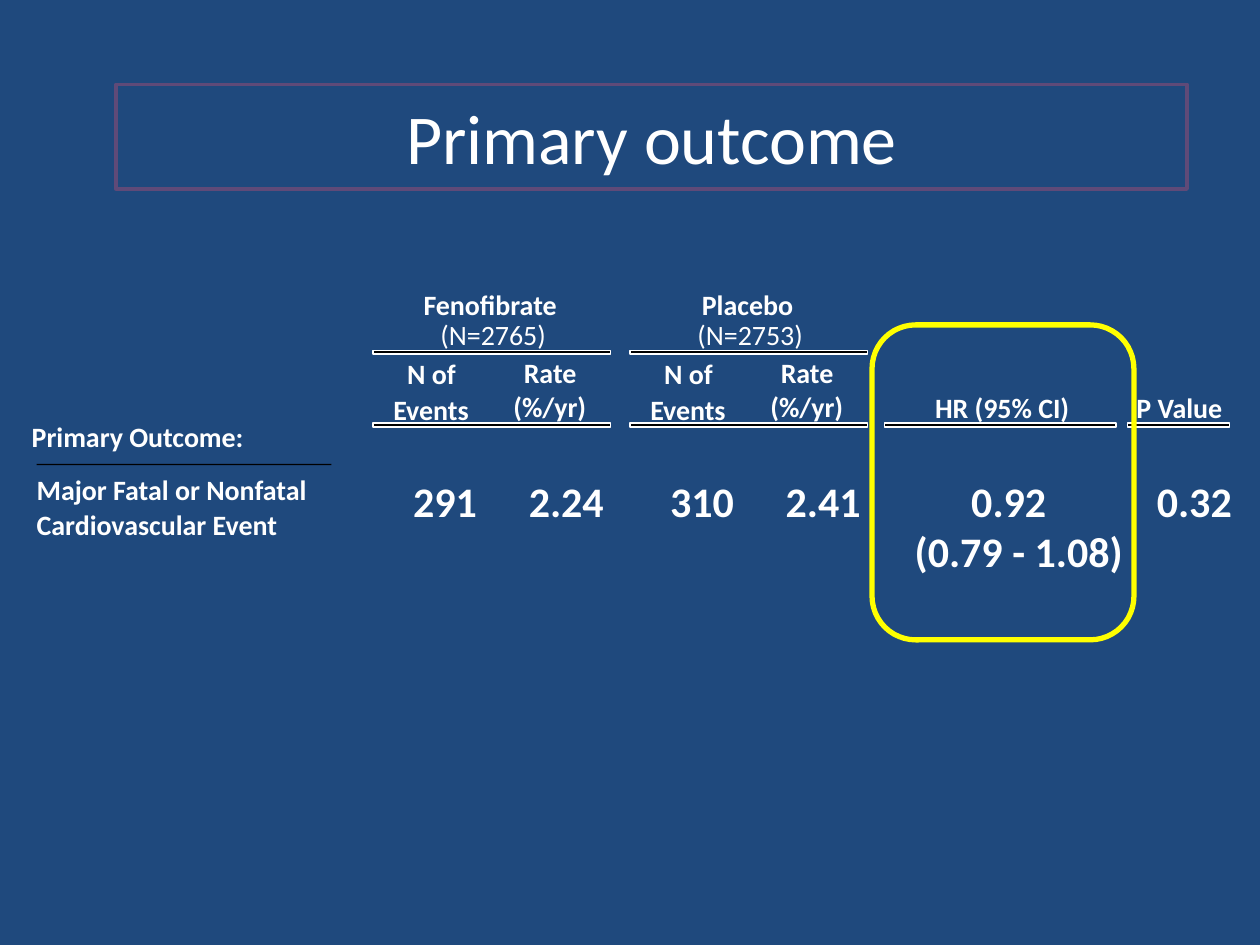
import dataclasses

import pptx
import pptx.dml.color
import pptx.enum.shapes
import pptx.enum.text
import pptx.util

Cm = pptx.util.Cm
Pt = pptx.util.Pt
NAVY = pptx.dml.color.RGBColor(0x1F, 0x49, 0x7D)
PURPLE = pptx.dml.color.RGBColor(0x5F, 0x4A, 0x78)
WHITE = pptx.dml.color.RGBColor(0xFF, 0xFF, 0xFF)
BLACK = pptx.dml.color.RGBColor(0x00, 0x00, 0x00)
YELLOW = pptx.dml.color.RGBColor(0xFF, 0xFF, 0x00)
FONT = "Calibri"
RULE_HEIGHT = 0.08
GROUP_RULE_TOP = 1.27
HEADER_TOP = 2.08
HEADER_RULE_TOP = 2.74
VALUE_TOP = 3.79
VALUE_SIZE = 24


@dataclasses.dataclass
class Box:
    left: float
    top: float
    width: float
    height: float

    def inner(self, left, top, width, height):
        return Box(self.left + left, self.top + top, width, height)

    def lengths(self):
        return Cm(self.left), Cm(self.top), Cm(self.width), Cm(self.height)


def format_span(span, size, bold):
    span.font.name = FONT
    span.font.size = Pt(size)
    span.font.bold = bold
    span.font.color.rgb = WHITE


def add_text(shapes, box, text, size=16, bold=True, first_indent=0):
    label = shapes.add_textbox(*box.lengths())
    frame = label.text_frame
    frame.margin_left = frame.margin_right = 0
    frame.margin_top = frame.margin_bottom = 0
    frame.word_wrap = False
    frame.auto_size = pptx.enum.text.MSO_AUTO_SIZE.SHAPE_TO_FIT_TEXT
    frame.text = text
    for para in frame.paragraphs:
        format_span(para.runs[0], size, bold)
    if first_indent:
        properties = frame.paragraphs[0]._p.get_or_add_pPr()
        properties.set("marL", str(Cm(first_indent)))
        properties.set("indent", "0")


def add_rule(shapes, box, outlined=True):
    rule = shapes.add_shape(
        pptx.enum.shapes.MSO_SHAPE.RECTANGLE, *box.lengths())
    rule.shadow.inherit = False
    rule.fill.solid()
    rule.fill.fore_color.rgb = BLACK
    if outlined:
        rule.line.color.rgb = WHITE
        rule.line.width = Pt(0.75)
    else:
        rule.line.fill.background()


def format_title(page, box):
    title = page.shapes.title
    title.left, title.top, title.width, title.height = box.lengths()
    title.line.color.rgb = PURPLE
    title.line.width = Pt(2)
    frame = title.text_frame
    frame.text = "Primary outcome"
    frame.vertical_anchor = pptx.enum.text.MSO_ANCHOR.MIDDLE
    para = frame.paragraphs[0]
    para.alignment = pptx.enum.text.PP_ALIGN.CENTER
    format_span(para.runs[0], 40, False)


def add_outcome_labels(shapes, box):
    add_text(shapes, box.inner(0, 2.67, 5.87, 0.69), "Primary Outcome:")
    add_rule(shapes, box.inner(0.1, 3.56, 5.94, 0.03), outlined=False)
    add_text(shapes, box.inner(0.1, 3.74, 5.64, 0.69),
             "Major Fatal or Nonfatal")
    add_text(shapes, box.inner(0.1, 4.45, 4.9, 0.69), "Cardiovascular Event")


def add_treatment_arm(shapes, box, name, name_left, name_width, patients,
                      events, rate):
    add_text(shapes, box.inner(name_left, 0, name_width, 0.69), name)
    add_text(shapes, box.inner(1.36, 0.61, 2.16, 0.69), patients, bold=False)
    for top in (GROUP_RULE_TOP, HEADER_RULE_TOP):
        add_rule(shapes, box.inner(0, top, box.width, RULE_HEIGHT))
    headers = [
        ("N of", 0.69, 1.4, 1.12),
        ("Events", 0.41, 2.13, 1.55),
        ("Rate", 3.04, 1.37, 1.07),
        ("(%/yr)", 2.83, 2.06, 1.5),
    ]
    for text, left, top, width in headers:
        add_text(shapes, box.inner(left, top, width, 0.69), text)
    for text, left, width in ((events, 0.81, 1.3), (rate, 3.14, 1.52)):
        add_text(shapes, box.inner(left, VALUE_TOP, width, 1.02), text,
                 size=VALUE_SIZE)


def add_statistic(shapes, box, header, header_left, header_width, value,
                  value_left, value_width, value_height, first_indent=0):
    add_text(shapes, box.inner(header_left, HEADER_TOP, header_width, 0.69),
             header)
    add_rule(shapes, box.inner(0, HEADER_RULE_TOP, box.width, RULE_HEIGHT))
    add_text(shapes,
             box.inner(value_left, VALUE_TOP, value_width, value_height),
             value, size=VALUE_SIZE, first_indent=first_indent)


def add_results(page, box):
    shapes = page.shapes.add_group_shape().shapes
    add_outcome_labels(shapes, box)
    arms = [
        ("Fenofibrate", 1.02, 2.72, "(N=2765)", "291", "2.24"),
        ("Placebo", 1.45, 1.85, "(N=2753)", "310", "2.41"),
    ]
    for index, arm in enumerate(arms):
        add_treatment_arm(
            shapes, box.inner(6.88 + 5.18 * index, 0, 4.79, box.height), *arm)
    add_statistic(shapes, box.inner(17.19, 0, 4.67, box.height),
                  "HR (95% CI)", 1.02, 2.74, "0.92\n(0.79 - 1.08)",
                  0.61, 4.22, 2.06, first_indent=1.14)
    add_statistic(shapes, box.inner(22.09, 0, 2.06, box.height),
                  "P Value", 0.18, 1.75, "0.32", 0.59, 1.52, 1.02)


def add_highlight(page, box):
    outline = page.shapes.add_shape(
        pptx.enum.shapes.MSO_SHAPE.ROUNDED_RECTANGLE, *box.lengths())
    outline.shadow.inherit = False
    outline.fill.background()
    outline.line.color.rgb = YELLOW
    outline.line.width = Pt(3)


def main():
    deck = pptx.Presentation()
    deck.slide_width = Cm(25.4)
    deck.slide_height = Cm(19.05)
    page = deck.slides.add_slide(deck.slide_layouts.get_by_name("Title Only"))
    page.background.fill.solid()
    page.background.fill.fore_color.rgb = NAVY
    format_title(page, Box(2.34, 1.7, 21.59, 2.11))
    add_results(page, Box(0.64, 5.79, 24.2, 5.85))
    add_highlight(page, Box(17.58, 6.55, 5.28, 6.35))
    deck.save("out.pptx")


if __name__ == "__main__":
    main()
